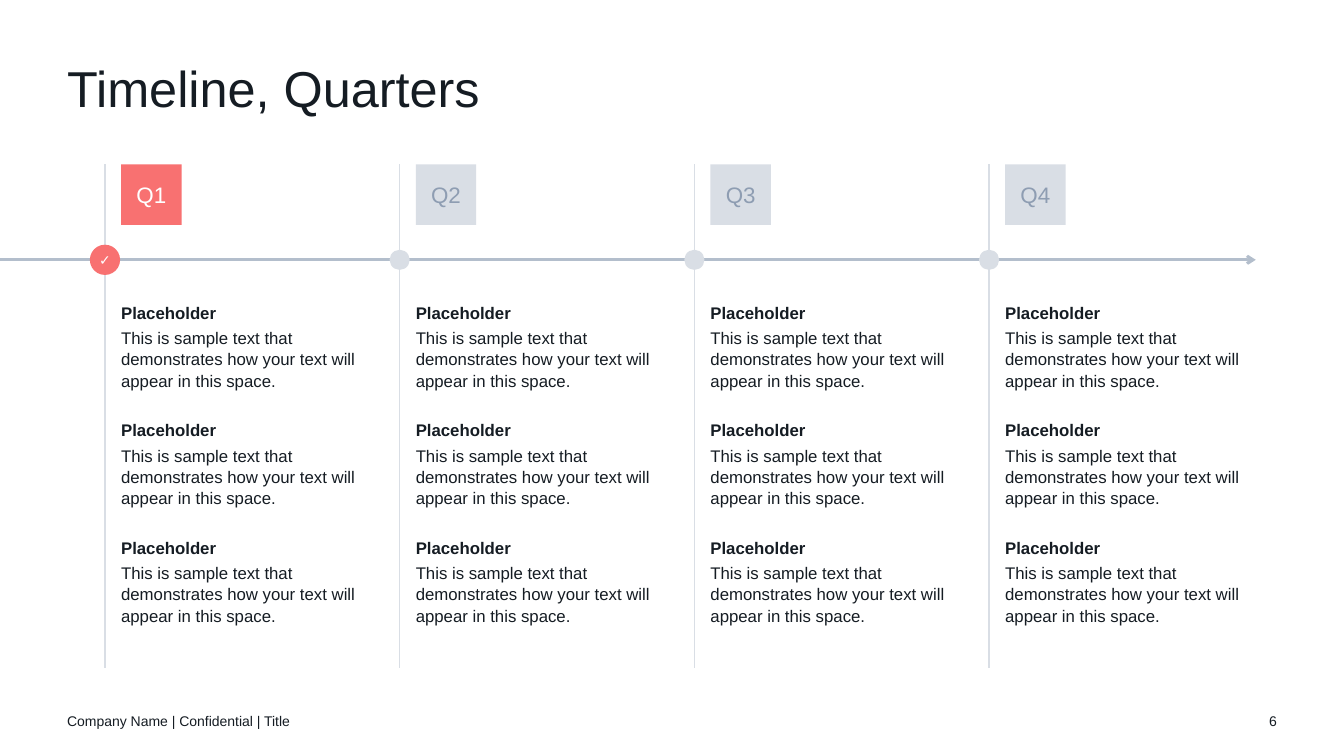
from lxml import etree
from pptx import Presentation
from pptx.dml.color import RGBColor
from pptx.enum.shapes import MSO_CONNECTOR, MSO_SHAPE
from pptx.enum.text import MSO_ANCHOR, PP_ALIGN
from pptx.oxml.ns import qn
from pptx.util import Pt

STRAIGHT = MSO_CONNECTOR.STRAIGHT
OVAL, RECTANGLE = MSO_SHAPE.OVAL, MSO_SHAPE.RECTANGLE
TOP, MIDDLE = MSO_ANCHOR.TOP, MSO_ANCHOR.MIDDLE
LEFT, CENTER, RIGHT = PP_ALIGN.LEFT, PP_ALIGN.CENTER, PP_ALIGN.RIGHT

FONT = "Arial"
INK, WHITE, ACCENT = "151C23", "FFFFFF", "F87171"
PALE, MUTED, AXIS = "D9DEE5", "8E9DB2", "B3BECC"

QUARTERS = ["Q1", "Q2", "Q3", "Q4"]
CURRENT = "Q1"
HEADING = "Placeholder"
BODY = "This is sample text that demonstrates how your text will appear in this space."
ENTRIES = [(HEADING, BODY)] * 3

COLUMN_LEFT, COLUMN_PITCH = 75, 210.5
COLUMN_TOP, COLUMN_HEIGHT = 117.5, 360
AXIS_Y, AXIS_END = 185.6, 897


def color(value):
    return RGBColor.from_string(value)


def format_frame(frame, anchor):
    frame.margin_left = frame.margin_right = frame.margin_top = frame.margin_bottom = 0
    frame.word_wrap = True
    frame.vertical_anchor = anchor


def format_paragraph(paragraph, text, size, ink=INK, bold=False, align=LEFT):
    paragraph.text = text
    paragraph.alignment = align
    font = paragraph.font
    font.name, font.size, font.bold = FONT, Pt(size), bold
    font.color.rgb = color(ink)


def add_text_box(slide, left, top, width, height, anchor):
    frame = slide.shapes.add_textbox(Pt(left), Pt(top), Pt(width), Pt(height)).text_frame
    format_frame(frame, anchor)
    return frame


def add_line(slide, x1, y1, x2, y2, line_color, weight):
    connector = slide.shapes.add_connector(STRAIGHT, Pt(x1), Pt(y1), Pt(x2), Pt(y2))
    connector.line.color.rgb = color(line_color)
    connector.line.width = Pt(weight)
    etree.SubElement(connector._element.spPr, qn("a:effectLst"))
    return connector


def add_filled_shape(slide, kind, left, top, size, fill):
    shape = slide.shapes.add_shape(kind, Pt(left), Pt(top), Pt(size), Pt(size))
    shape.shadow.inherit = False
    shape.fill.solid()
    shape.fill.fore_color.rgb = color(fill)
    shape.line.fill.background()
    format_frame(shape.text_frame, MIDDLE)
    return shape


def add_title(slide, left, top, width, height):
    title = slide.shapes.title
    title.left, title.top, title.width, title.height = Pt(left), Pt(top), Pt(width), Pt(height)
    format_frame(title.text_frame, MIDDLE)
    paragraph = title.text_frame.paragraphs[0]
    format_paragraph(paragraph, "Timeline, Quarters", 36)
    paragraph.line_spacing = 0.9


def add_axis(slide, left, right, y):
    axis = add_line(slide, left, y, right, y, AXIS, 2)
    etree.SubElement(axis.line._get_or_add_ln(), qn("a:tailEnd"), type="arrow")


def add_entries(slide, left, top, width, height):
    frame = add_text_box(slide, left, top, width, height, TOP)
    for index, (heading, body) in enumerate(ENTRIES):
        first = frame.add_paragraph() if index else frame.paragraphs[0]
        second = frame.add_paragraph()
        format_paragraph(first, heading, 12, bold=True)
        format_paragraph(second, body, 12)
        if index:
            first.space_before = Pt(17.5)
        for paragraph in (first, second):
            paragraph.space_after = Pt(3)
            paragraph.line_spacing = 1.05


def add_quarter(slide, quarter, left, top, height):
    current = quarter == CURRENT
    fill = ACCENT if current else PALE
    content_left = left + 11.5
    add_line(slide, left, top, left, top + height, PALE, 1)

    # Marker on the axis
    size = 21.6 if current else 14.4
    marker = add_filled_shape(slide, OVAL, left - size / 2, AXIS_Y - size / 2, size, fill)
    if current:
        format_paragraph(marker.text_frame.paragraphs[0], "✓", 10, WHITE, True, CENTER)

    # Quarter label and its entries
    label = add_filled_shape(slide, RECTANGLE, content_left, top, 43.2, fill)
    format_paragraph(label.text_frame.paragraphs[0], quarter, 16,
                     WHITE if current else MUTED, align=CENTER)
    add_entries(slide, content_left, top + 98, 175, 238)


def add_footer(slide, left, top, width, height):
    number_width = 36
    footer = add_text_box(slide, left, top, 324, height, MIDDLE)
    format_paragraph(footer.paragraphs[0], "Company Name | Confidential | Title", 10)
    number = add_text_box(slide, left + width - number_width, top, number_width, height, MIDDLE)
    format_paragraph(number.paragraphs[0], "6", 10, align=RIGHT)


def main():
    presentation = Presentation()
    presentation.slide_width, presentation.slide_height = Pt(960), Pt(540)
    slide = presentation.slides.add_slide(presentation.slide_layouts[5])
    add_title(slide, 48, 43.2, 864, 43.2)
    add_axis(slide, 0, AXIS_END, AXIS_Y)
    for index, quarter in enumerate(QUARTERS):
        add_quarter(slide, quarter, COLUMN_LEFT + index * COLUMN_PITCH,
                    COLUMN_TOP, COLUMN_HEIGHT)
    add_footer(slide, 48, 500.4, 864, 28.8)
    presentation.save("out.pptx")


if __name__ == "__main__":
    main()
